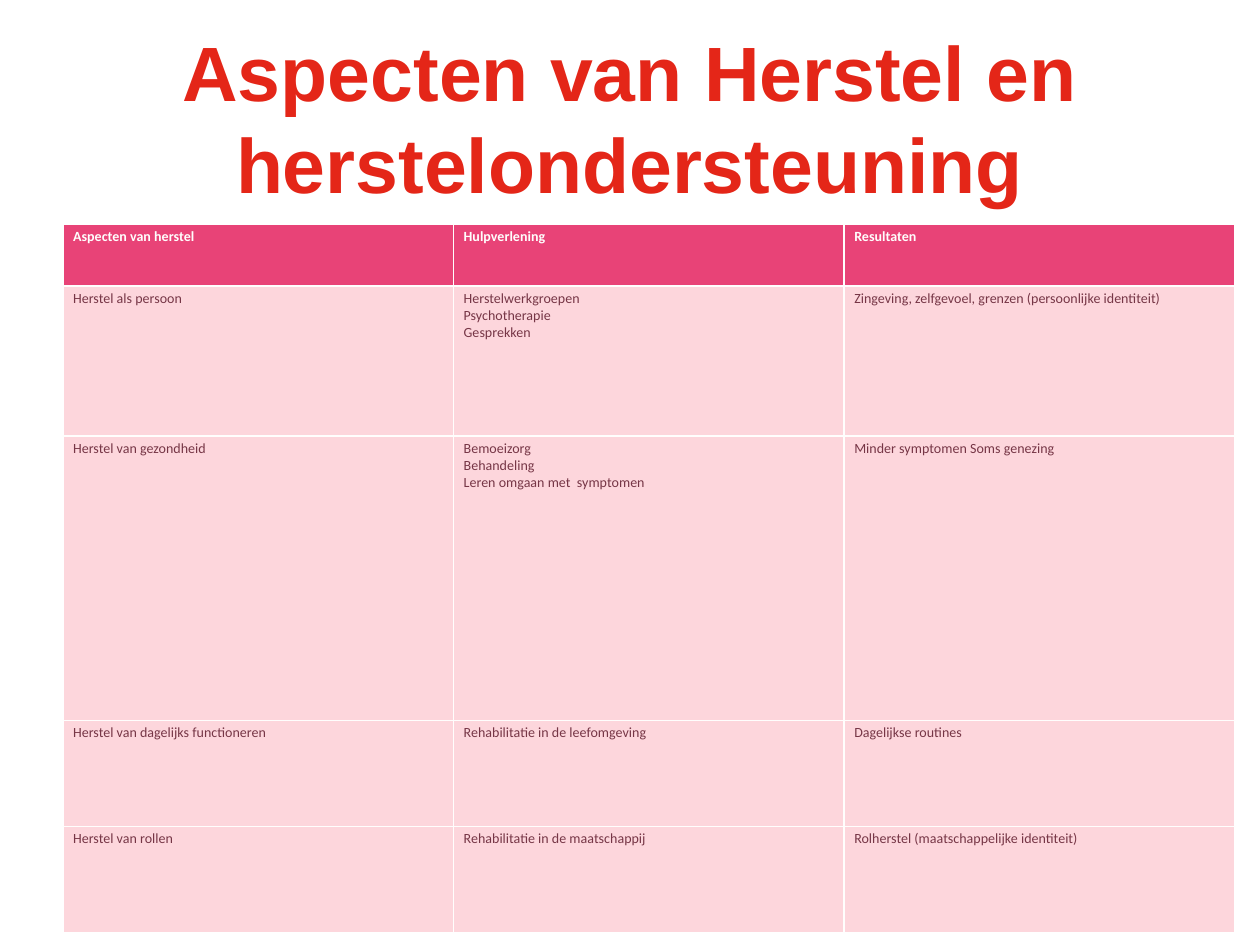
from dataclasses import dataclass

import pptx
import pptx.dml.color
import pptx.enum.text
import pptx.oxml
import pptx.oxml.ns
import pptx.util
from pptx.util import Inches


@dataclass(frozen=True)
class Theme:
    title_color: str = "E42618"
    header_fill: str = "E84377"
    body_fill: str = "FDD6DC"
    body_text: str = "763646"
    light: str = "FFFEFD"
    title_font: str = "Arial"
    table_font: str = "Calibri"
    title_size: int = 44
    table_size: int = 8
    border_width: int = 1


THEME = Theme()
TITLE = "Aspecten van Herstel en herstelondersteuning"
COLUMN_WIDTH = 3.1
ROW_HEIGHTS = [0.49, 1.19, 2.26, 0.84, 0.84]
# Each cell is a list of paragraphs
ROWS = [
    [["Aspecten van herstel"], ["Hulpverlening"], ["Resultaten"]],
    [["Herstel als persoon"],
     ["Herstelwerkgroepen", "Psychotherapie", "Gesprekken"],
     ["Zingeving, zelfgevoel, grenzen (persoonlijke identiteit)"]],
    [["Herstel van gezondheid"],
     ["Bemoeizorg", "Behandeling", "Leren omgaan met  symptomen"],
     ["Minder symptomen Soms genezing"]],
    [["Herstel van dagelijks functioneren"],
     ["Rehabilitatie in de leefomgeving"],
     ["Dagelijkse routines"]],
    [["Herstel van rollen"],
     ["Rehabilitatie in de maatschappij"],
     ["Rolherstel (maatschappelijke identiteit)"]],
]


def rgb(color):
    return pptx.dml.color.RGBColor.from_string(color)


def add_run(paragraph, text, font_name, size, color, bold):
    run = paragraph.add_run()
    run.text = text
    run.font.name = font_name
    run.font.size = pptx.util.Pt(size)
    run.font.color.rgb = rgb(color)
    run.font.bold = bold


def add_title(slide):
    title = slide.shapes.title
    title.left, title.top = Inches(0.5), Inches(0.3)
    title.width, title.height = Inches(9), Inches(1.25)
    frame = title.text_frame
    frame.word_wrap = True
    frame.auto_size = pptx.enum.text.MSO_AUTO_SIZE.NONE
    frame.vertical_anchor = pptx.enum.text.MSO_ANCHOR.MIDDLE
    frame.margin_left = frame.margin_right = Inches(0.1)
    frame.margin_top = frame.margin_bottom = Inches(0.1)
    paragraph = frame.paragraphs[0]
    paragraph.alignment = pptx.enum.text.PP_ALIGN.CENTER
    add_run(paragraph, TITLE, THEME.title_font, THEME.title_size,
            THEME.title_color, True)


def add_borders(cell, sides):
    properties = cell._tc.get_or_add_tcPr()
    width = pptx.util.Pt(THEME.border_width)
    for side in sides:
        properties.append(pptx.oxml.parse_xml(
            f'<a:ln{side} {pptx.oxml.ns.nsdecls("a")} w="{width}"><a:solidFill>'
            f'<a:srgbClr val="{THEME.light}"/></a:solidFill></a:ln{side}>'))


def fill_cell(cell, lines, is_header, sides):
    add_borders(cell, sides)
    cell.fill.solid()
    cell.fill.fore_color.rgb = rgb(
        THEME.header_fill if is_header else THEME.body_fill)
    cell.margin_left = cell.margin_right = Inches(0.08)
    cell.margin_top, cell.margin_bottom = Inches(0.03), Inches(0)
    color = THEME.light if is_header else THEME.body_text
    frame = cell.text_frame
    for index, line in enumerate(lines):
        paragraph = frame.add_paragraph() if index else frame.paragraphs[0]
        add_run(paragraph, line, THEME.table_font, THEME.table_size,
                color, is_header)


def add_recovery_table(slide):
    row_count, column_count = len(ROWS), len(ROWS[0])
    table = slide.shapes.add_table(
        row_count, column_count, Inches(0.5), Inches(1.78),
        Inches(COLUMN_WIDTH * column_count), Inches(sum(ROW_HEIGHTS))).table
    for column in table.columns:
        column.width = Inches(COLUMN_WIDTH)
    for row, height in zip(table.rows, ROW_HEIGHTS):
        row.height = Inches(height)
    for r, row in enumerate(ROWS):
        for c, lines in enumerate(row):
            # Only the inner grid lines are drawn
            inner = {"L": c > 0, "R": c < column_count - 1,
                     "T": r > 0, "B": r < row_count - 1}
            sides = [side for side, shown in inner.items() if shown]
            fill_cell(table.cell(r, c), lines, r == 0, sides)


def main():
    presentation = pptx.Presentation()
    presentation.slide_width = Inches(10)
    presentation.slide_height = Inches(7.5)
    # "Title Only" layout
    slide = presentation.slides.add_slide(presentation.slide_layouts[5])
    add_title(slide)
    add_recovery_table(slide)
    presentation.save("out.pptx")


if __name__ == "__main__":
    main()
